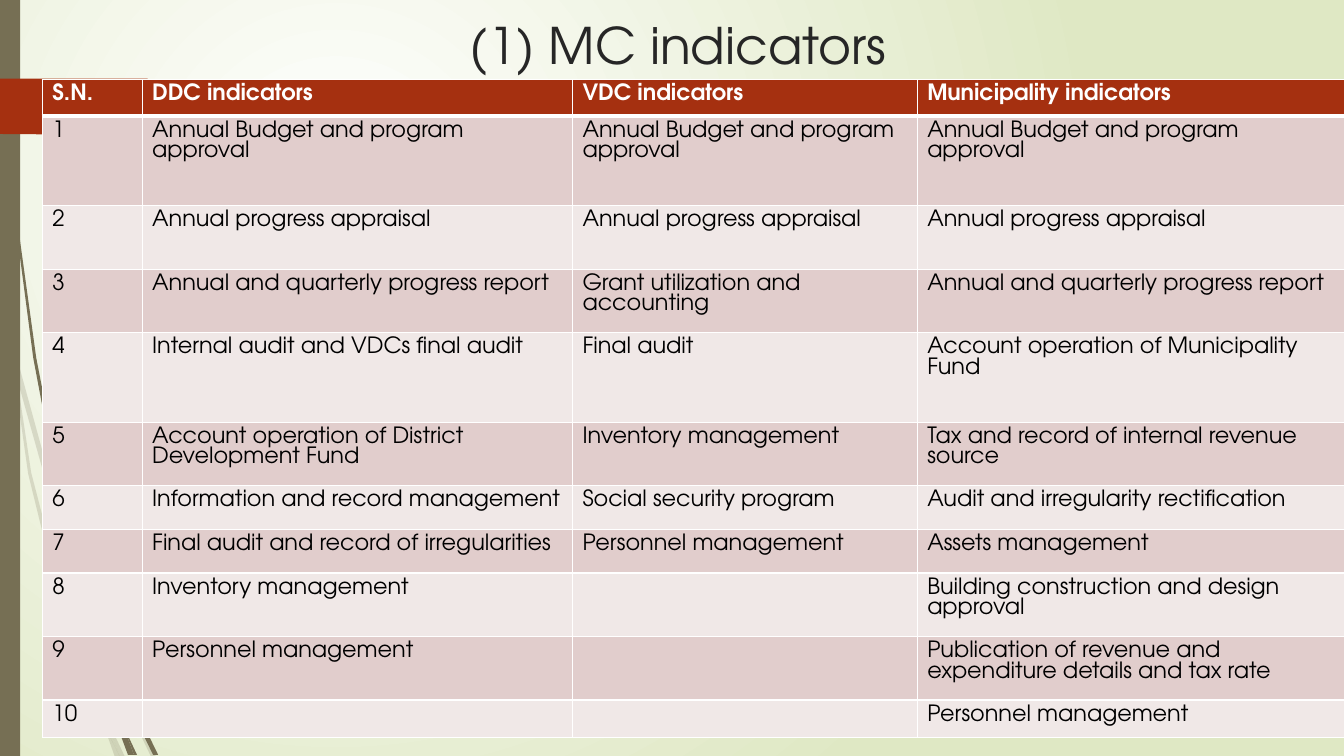
"""Builds the slide that lists the MC indicators of DDCs, VDCs and municipalities."""
from lxml.etree import SubElement
from pptx import Presentation
from pptx.dml.color import RGBColor
from pptx.enum.text import MSO_ANCHOR as Anchor, PP_ALIGN as Align
from pptx.oxml.ns import qn
from pptx.util import Pt

FONT = "TeX Gyre Adventor"
RED, BROWN, WHITE = "A53010", "766F54", "FFFFFF"
UNIT = Pt(0.72)


def tint(code):
    return RGBColor.from_string(code)


def paint(shape, code):
    shape.fill.solid()
    shape.fill.fore_color.rgb = tint(code)
    shape.line.fill.background()
    shape.shadow.inherit = False


deck = Presentation()
deck.slide_width, deck.slide_height = Pt(960), Pt(540)
slide = deck.slides.add_slide(deck.slide_layouts[6])

back = slide.background.fill
back.gradient()
for stop, code in zip(back.gradient_stops, (WHITE, "DFE8C4")):
    stop.color.rgb = tint(code)
grad = slide.element.find(".//" + qn("a:gradFill"))
grad.remove(grad.find(qn("a:lin")))
glow = SubElement(grad, qn("a:path"), path="circle")
SubElement(glow, qn("a:fillToRect"), l="50000", t="50000", r="100000", b="100000")

pale = [
    [(11, 350), (9, 322), (0, 282), (0, 299), (10, 344)],
    [(58, 522), (84, 599), (85, 586), (62, 520), (14, 345), (17, 376)],
    [(92, 607), (88, 596), (88, 610), (123, 694), (150, 751), (155, 751), (127, 692)],
    [(119, 751), (124, 751), (105, 711)],
    [(93, 683), (70, 619), (31, 469), (17, 376), (11, 350), (28, 470), (65, 621),
     (92, 693), (101, 714), (99, 707)],
    [(84, 599), (87, 646), (93, 683), (96, 692), (105, 711), (103, 706), (91, 646),
     (88, 610), (88, 608)],
    [(88, 584), (110, 462), (160, 349), (229, 245), (268, 198), (290, 175), (312, 154),
     (312, 153), (289, 175), (268, 197), (228, 244), (158, 348), (107, 461), (85, 584),
     (85, 586), (88, 596)],
    [(101, 714), (114, 751), (119, 751)],
    [(88, 608), (88, 610), (88, 596), (85, 586), (84, 599)],
    [(96, 692), (93, 683), (99, 707), (101, 714), (119, 751), (105, 711)],
]
dark = [
    [(7, 110), (17, 233), (33, 355), (56, 477), (57, 481), (55, 457), (55, 453),
     (36, 355), (19, 232), (8, 109), (5, 48), (4, 0), (3, 0), (4, 48)],
    [(88, 592), (106, 645), (106, 633), (106, 631), (93, 590), (60, 472), (64, 505)],
    [(113, 649), (110, 641), (111, 656), (132, 708), (152, 749), (157, 749), (136, 706)],
    [(110, 691), (98, 657), (72, 556), (64, 505), (57, 477), (68, 557), (93, 659),
     (111, 708), (117, 722), (116, 717)],
    [(60, 472), (58, 453), (54, 349), (58, 245), (63, 193), (70, 141), (62, 193),
     (56, 245), (52, 349), (55, 449)],
    [(133, 749), (136, 749), (122, 719)],
    [(57, 477), (64, 505), (60, 472), (55, 449), (55, 453)],
    [(111, 633), (125, 552), (158, 476), (205, 406), (231, 374), (245, 359), (261, 344),
     (260, 344), (245, 358), (231, 373), (204, 405), (156, 474), (122, 551), (106, 631),
     (110, 641)],
    [(117, 722), (127, 749), (131, 749)],
    [(106, 645), (110, 691), (116, 706), (122, 719), (121, 716), (111, 656), (109, 651)],
    [(106, 645), (109, 651), (111, 656), (110, 641), (106, 631), (106, 633)],
    [(116, 706), (110, 691), (116, 717), (117, 722), (130, 749), (133, 749), (122, 719)],
]
arrow = [(173, 108), (148, 133), (146, 134), (136, 134), (0, 133), (0, 78), (136, 78),
         (146, 78), (148, 79), (173, 104), (174, 106)]

for blades, alpha in ((pale, "20000"), (dark, "100000")):
    grass = slide.shapes.add_group_shape()
    for blade in blades:
        pen = grass.shapes.build_freeform(*blade[0], scale=UNIT)
        pen.add_line_segments(blade[1:])
        leaf = pen.convert_to_shape()
        paint(leaf, BROWN)
        color = leaf.element.spPr.find(qn("a:solidFill"))[0]
        SubElement(color, qn("a:alpha"), val=alpha)

paint(slide.shapes.add_shape(1, 0, 0, Pt(14.4), Pt(540)), BROWN)
pen = slide.shapes.build_freeform(*arrow[0], scale=UNIT)
pen.add_line_segments(arrow[1:])
paint(pen.convert_to_shape(), RED)

title = slide.shapes.add_textbox(Pt(70.56), Pt(6.48), Pt(828), Pt(60.48)).text_frame
title.word_wrap = True
title.vertical_anchor = Anchor.TOP
head = title.paragraphs[0]
head.text = "(1) MC indicators"
head.alignment = Align.CENTER
head.font.name, head.font.size = FONT, Pt(36)
head.font.color.rgb = tint("262626")

budget = "Annual Budget and program approval"
yearly = "Annual progress appraisal"
report = "Annual and quarterly progress report"
stock = "Inventory management"
staff = "Personnel management"
rows = [
    (25.92, "S.N.", "DDC indicators", "VDC indicators", "Municipality indicators"),
    (64.08, "1", budget, budget, budget),
    (45.36, "2", yearly, yearly, yearly),
    (45.36, "3", report, "Grant utilization and accounting", report),
    (64.08, "4", "Internal audit and VDCs final audit", "Final audit",
     "Account operation of Municipality Fund"),
    (45.36, "5", "Account operation of District Development Fund", stock,
     "Tax and record of internal revenue source"),
    (31.2, "6", "Information and record management", "Social security program",
     "Audit and irregularity rectification"),
    (31.2, "7", "Final audit and record of irregularities", staff, "Assets management"),
    (45.36, "8", stock, "", "Building construction and design approval"),
    (45.36, "9", staff, "", "Publication of revenue and expenditure details and tax rate"),
    (26.6, "10", "", "", staff),
]
widths = [71.28, 307.44, 246.24, 305.28]
table = slide.shapes.add_table(len(rows), len(widths), Pt(30.24), Pt(56.88),
                               Pt(sum(widths)), Pt(sum(row[0] for row in rows))).table
for col, width in zip(table.columns, widths):
    col.width = Pt(width)
for i, (height, *texts) in enumerate(rows):
    table.rows[i].height = Pt(height)
    for j, text in enumerate(texts):
        cell = table.cell(i, j)
        para = cell.text_frame.paragraphs[0]
        para.text = text
        para.line_spacing = Pt(14.6)
        para.font.name, para.font.size, para.font.bold = FONT, Pt(16), i == 0
        para.font.color.rgb = tint("000000" if i else WHITE)
        props = cell._tc.get_or_add_tcPr()
        for side in "LRTB":
            thick = (i, side) in ((0, "B"), (1, "T"))
            edge = SubElement(props, qn("a:ln" + side), w=str(Pt(3 if thick else 1)))
            SubElement(SubElement(edge, qn("a:solidFill")), qn("a:srgbClr"), val=WHITE)
        cell.fill.solid()
        cell.fill.fore_color.rgb = tint(("E1CDCC" if i % 2 else "F0E8E7") if i else RED)

deck.save("out.pptx")
